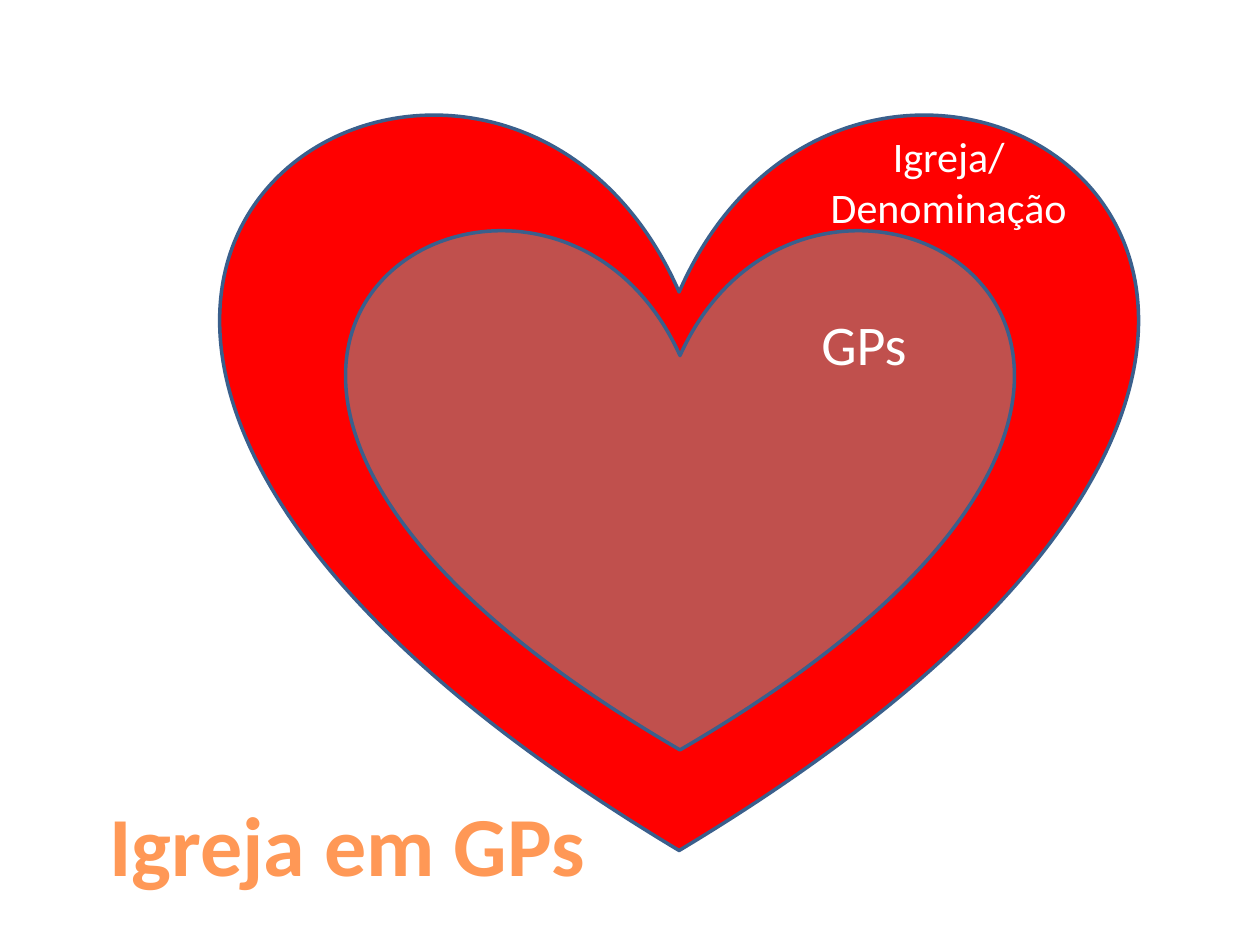
from pptx import Presentation
from pptx.dml.color import RGBColor
from pptx.enum.shapes import MSO_SHAPE as Preset
from pptx.enum.text import MSO_ANCHOR as Anchor, PP_ALIGN as Align
from pptx.util import Inches, Pt

WIDTH, HEIGHT = 10, 7.5
WHITE, RED, BRICK, NAVY, ORANGE = "FFFFFF", "FF0000", "C0504D", "3A5F8C", "FF9856"


def color(value):
    return RGBColor.from_string(value)


def inches(box):
    return [Inches(length) for length in box]


def within(box, left, top, width, height):
    x, y, w, h = box
    return x + left * w, y + top * h, width * w, height * h


def write(frame, lines, size, ink, bold=False):
    frame.vertical_anchor = Anchor.TOP
    frame.text = "\n".join(lines)
    for paragraph in frame.paragraphs:
        paragraph.alignment = Align.CENTER
        font = paragraph.font
        font.name, font.size, font.bold = "Calibri", Pt(size), bold
        font.color.rgb = color(ink)


def add_heart(slide, box, fill):
    heart = slide.shapes.add_shape(Preset.HEART, *inches(box))
    heart.shadow.inherit = False
    heart.fill.solid()
    heart.fill.fore_color.rgb = color(fill)
    heart.line.color.rgb = color(NAVY)
    heart.line.width = Pt(2)


def add_label(slide, box, lines, size):
    label = slide.shapes.add_textbox(*inches(box))
    label.text_frame.word_wrap = True
    write(label.text_frame, lines, size, WHITE)


def add_nested_hearts(slide, box):
    gps = within(box, 0.137, 0.159, 0.728, 0.706)
    add_heart(slide, box, RED)
    add_heart(slide, gps, BRICK)
    add_label(slide, within(gps, 0.592, 0.151, 0.37, 0.153), ["GPs"], 32)
    add_label(slide, within(box, 0.645, 0.025, 0.301, 0.154),
              ["Igreja/", "Denominação"], 24)


def place_title(slide, box):
    title = slide.shapes.title
    title.left, title.top, title.width, title.height = inches(box)
    title.text_frame.word_wrap = False
    write(title.text_frame, ["Igreja em GPs"], 48, ORANGE, bold=True)


def main():
    deck = Presentation()
    deck.slide_width, deck.slide_height = Inches(WIDTH), Inches(HEIGHT)
    slide = deck.slides.add_slide(deck.slide_layouts[5])
    page = 0, 0, WIDTH, HEIGHT
    add_nested_hearts(slide, within(page, 0.177, 0.112, 0.724, 0.788))
    place_title(slide, within(page, 0.075, 0.832, 0.401, 0.121))
    deck.save("out.pptx")


if __name__ == "__main__":
    main()
